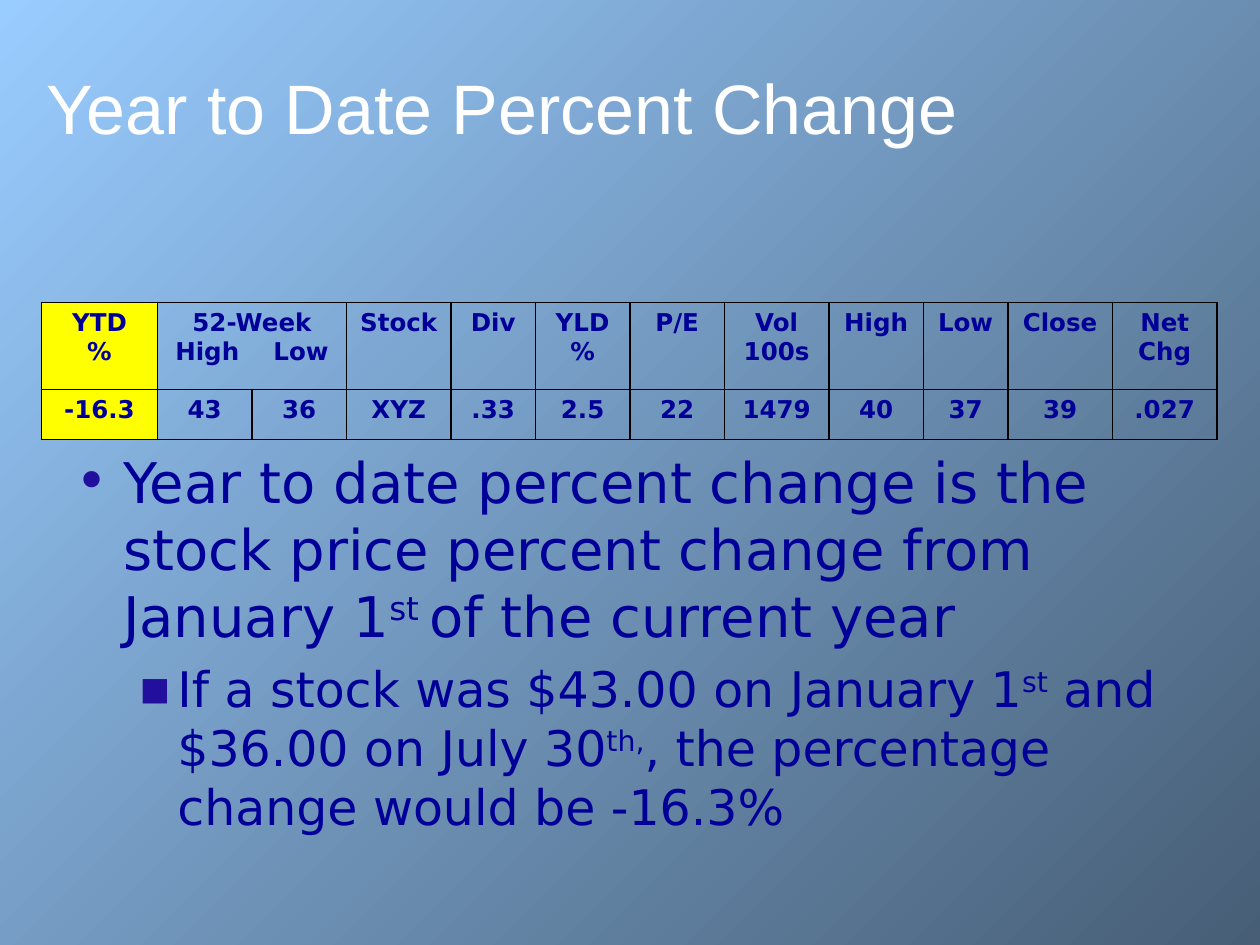
import pptx
import pptx.util
import pptx.dml.color
import pptx.enum.text
import pptx.oxml
import pptx.oxml.ns
from lxml import etree

Inches = pptx.util.Inches
Pt = pptx.util.Pt

NAVY, WHITE, YELLOW, BLACK, BULLET = "000099", "FFFFFF", "FFFF00", "000000", "230F9D"
BACKGROUND = ["99CCFF", "475E76"]
BODY_FONT = "DejaVu Sans"
WIDE_GAP = "1460"

TITLE = "Year to Date Percent Change"
COLUMN_WIDTHS = [0.92, 0.75, 0.75, 0.83, 0.67, 0.75, 0.75, 0.83, 0.75, 0.67, 0.83, 0.83]
ROW_HEIGHTS = [0.69, 0.4]
QUOTES = [
    ["YTD\n%", "52-Week\nHigh Low", "", "Stock", "Div", "YLD\n%", "P/E",
     "Vol\n100s", "High", "Low", "Close", "Net\nChg"],
    ["-16.3", "43", "36", "XYZ", ".33", "2.5", "22", "1479", "40", "37", "39", ".027"],
]
BULLETS = [
    {"symbol": "•", "size": 32, "margin": 0.38, "hanging": 0.38, "runs": [
        ("Year to date percent change is the stock price percent change from January 1", False),
        ("st ", True), ("of the current year", False)]},
    {"symbol": "▪", "size": 28, "margin": 0.81, "hanging": 0.31, "runs": [
        ("If a stock was $43.00 on January 1", False), ("st", True),
        (" and $36.00 on July 30", False), ("th,", True),
        (", the percentage change would be -16.3%", False)]},
]


def color(value):
    return pptx.dml.color.RGBColor.from_string(value)


def style(font, name, size, value, bold=False):
    font.name, font.size, font.bold = name, Pt(size), bold
    font.color.rgb = color(value)


def add_child(parent, tag, **attributes):
    return etree.SubElement(parent, pptx.oxml.ns.qn(tag), attributes)


def add_text_frame(slide, left, top, width, height):
    box = slide.shapes.add_textbox(*map(Inches, (left, top, width, height)))
    box.text_frame.word_wrap = True
    return box.text_frame


def add_borders(cell):
    properties = cell._tc.get_or_add_tcPr()
    for side in ("a:lnL", "a:lnR", "a:lnT", "a:lnB"):
        line = add_child(properties, side, w=str(Pt(1)))
        add_child(add_child(line, "a:solidFill"), "a:srgbClr", val=BLACK)


def fill_cell(cell, text, fill):
    add_borders(cell)
    if fill:
        cell.fill.solid()
        cell.fill.fore_color.rgb = color(fill)
    else:
        cell.fill.background()
    for index, line in enumerate(text.split("\n")):
        frame = cell.text_frame
        paragraph = frame.add_paragraph() if index else frame.paragraphs[0]
        paragraph.alignment = pptx.enum.text.PP_ALIGN.CENTER
        for part in filter(None, line.partition(" ")):
            run = paragraph.add_run()
            run.text = part
            style(run.font, BODY_FONT, 14, NAVY, True)
            if part == " ":
                run._r.get_or_add_rPr().set("spc", WIDE_GAP)


def add_quote_table(slide):
    frame = slide.shapes.add_table(len(QUOTES), len(COLUMN_WIDTHS), Inches(0.33), Inches(2.4),
                                   Inches(sum(COLUMN_WIDTHS)), Inches(sum(ROW_HEIGHTS)))
    table = frame.table
    table.first_row = table.horz_banding = False
    for column, width in zip(table.columns, COLUMN_WIDTHS):
        column.width = Inches(width)
    for row, height in zip(table.rows, ROW_HEIGHTS):
        row.height = Inches(height)
    for row_index, values in enumerate(QUOTES):
        for column_index, value in enumerate(values):
            fill_cell(table.cell(row_index, column_index), value,
                      None if column_index else YELLOW)
    table.cell(0, 1).merge(table.cell(0, 2))


def add_bullet(paragraph, level, bullet):
    paragraph.level = level
    paragraph.space_before = Pt(bullet["size"] * 0.2)
    properties = paragraph._p.get_or_add_pPr()
    properties.set("marL", str(Inches(bullet["margin"])))
    properties.set("indent", str(-Inches(bullet["hanging"])))
    add_child(add_child(properties, "a:buClr"), "a:srgbClr", val=BULLET)
    add_child(properties, "a:buFont", typeface=BODY_FONT)
    add_child(properties, "a:buChar", char=bullet["symbol"])
    for text, raised in bullet["runs"]:
        run = paragraph.add_run()
        run.text = text
        style(run.font, BODY_FONT, bullet["size"], NAVY)
        if raised:
            run._r.get_or_add_rPr().set("baseline", "30000")


def main():
    presentation = pptx.Presentation()
    presentation.slide_width, presentation.slide_height = Inches(10), Inches(7.5)
    slide = presentation.slides.add_slide(presentation.slide_layouts[6])

    background = slide.background.fill
    background.gradient()
    background.gradient_angle = 315
    for stop, value in zip(background.gradient_stops, BACKGROUND):
        stop.color.rgb = color(value)

    title = add_text_frame(slide, 0.27, 0.28, 9.45, 0.95)
    title.vertical_anchor = pptx.enum.text.MSO_ANCHOR.BOTTOM
    title.text = TITLE
    style(title.paragraphs[0].runs[0].font, "Arial", 40, WHITE)

    add_quote_table(slide)

    body = add_text_frame(slide, 0.5, 3.5, 9, 3.33)
    for level, bullet in enumerate(BULLETS):
        paragraph = body.add_paragraph() if level else body.paragraphs[0]
        add_bullet(paragraph, level, bullet)

    presentation.save("out.pptx")


if __name__ == "__main__":
    main()
